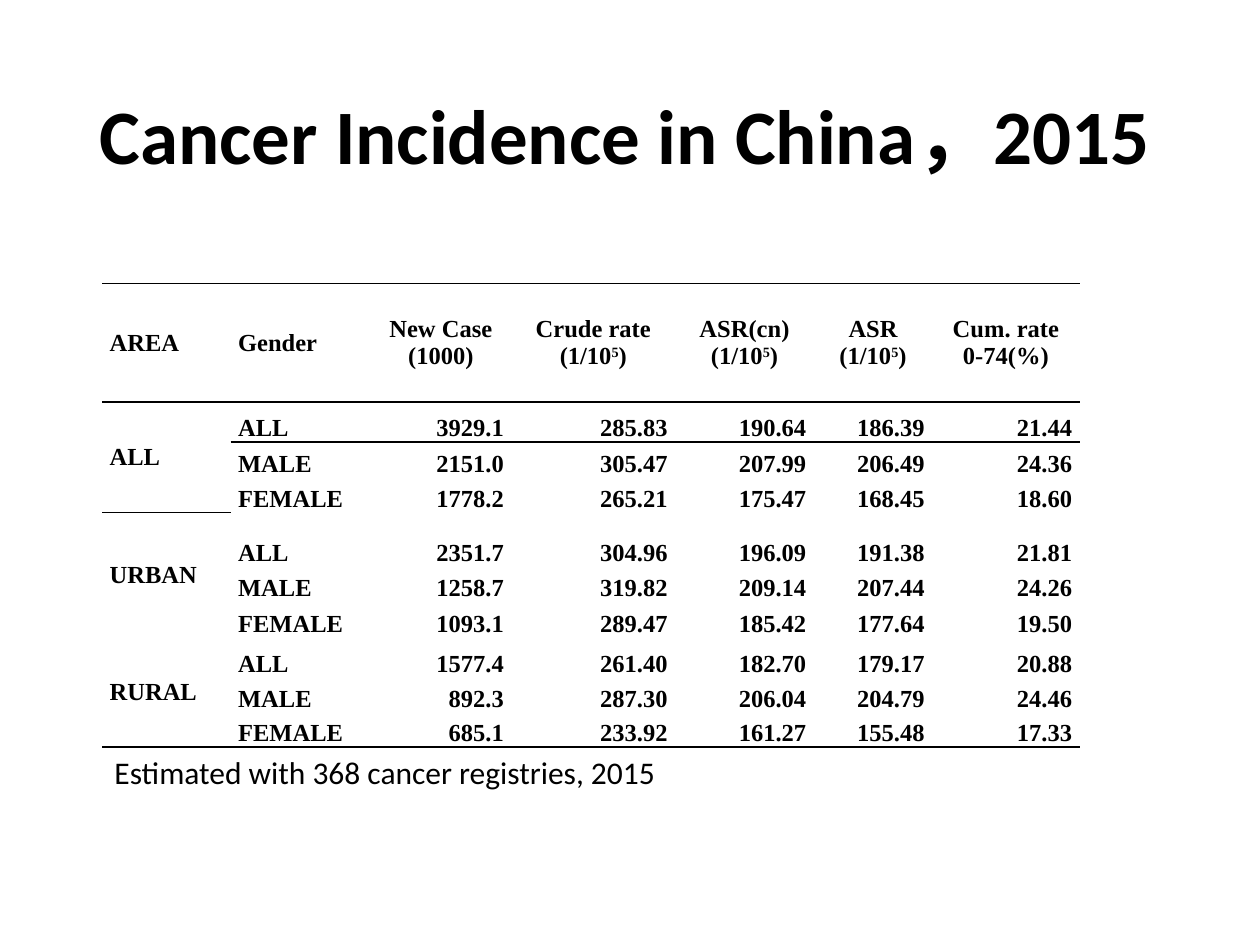
from lxml import etree
from pptx import Presentation
from pptx.dml.color import RGBColor
from pptx.enum import text
from pptx.oxml import ns
from pptx.util import Inches, Pt

BLACK = "000000"
NO_STYLE = "{2D5ABB26-0587-4C30-8999-92F81FD0307C}"


def add_run(paragraph, words, size, font, bold=False):
    run = paragraph.add_run()
    run.text = words
    run.font.size = Pt(size)
    run.font.name = font
    run.font.bold = bold
    run.font.color.rgb = RGBColor.from_string(BLACK)
    return run


def add_rule(cell, side):
    """Draw a 1 pt line on the top ("T") or bottom ("B") edge of a cell."""
    line = etree.SubElement(cell._tc.get_or_add_tcPr(), ns.qn("a:ln" + side), w=str(Pt(1)))
    fill = etree.SubElement(line, ns.qn("a:solidFill"))
    etree.SubElement(fill, ns.qn("a:srgbClr"), val=BLACK)


prs = Presentation()
prs.slide_width, prs.slide_height = Inches(10), Inches(7.5)
slide = prs.slides.add_slide(prs.slide_layouts[5])

title = slide.shapes.title
title.left, title.top = Inches(0.69), Inches(0.33)
title.width, title.height = Inches(8.62), Inches(1.55)
title.text_frame.vertical_anchor = text.MSO_ANCHOR.MIDDLE
heading = title.text_frame.paragraphs[0]
heading.alignment = text.PP_ALIGN.LEFT
heading.line_spacing = 0.9
add_run(heading, "Cancer Incidence in China，2015", 44, "Calibri", True)

# Each header is a list of paragraphs; "^" encloses a superscript.
headers = [
    ["AREA"], ["Gender"], ["New Case", "(1000)"], ["Crude rate (1/10^5^)"],
    ["ASR(cn)", "(1/10^5^)"], ["ASR (1/10^5^)"], ["Cum. rate", "0-74(%)"],
]
incidence = {
    "ALL": [
        ("ALL", "3929.1", "285.83", "190.64", "186.39", "21.44"),
        ("MALE", "2151.0", "305.47", "207.99", "206.49", "24.36"),
        ("FEMALE", "1778.2", "265.21", "175.47", "168.45", "18.60"),
    ],
    "URBAN": [
        ("ALL", "2351.7", "304.96", "196.09", "191.38", "21.81"),
        ("MALE", "1258.7", "319.82", "209.14", "207.44", "24.26"),
        ("FEMALE", "1093.1", "289.47", "185.42", "177.64", "19.50"),
    ],
    "RURAL": [
        ("ALL", "1577.4", "261.40", "182.70", "179.17", "20.88"),
        ("MALE", "892.3", "287.30", "206.04", "204.79", "24.46"),
        ("FEMALE", "685.1", "233.92", "161.27", "155.48", "17.33"),
    ],
}
rows = [headers]
for area, genders in incidence.items():
    for index, values in enumerate(genders):
        rows.append([[area] if index == 0 else []] + [[value] for value in values])

column_widths = [1.02, 1.11, 1.12, 1.3, 1.1, 0.94, 1.17]
row_heights = [0.94, 0.32, 0.28, 0.28, 0.43, 0.28, 0.28, 0.32, 0.28, 0.27]
frame = slide.shapes.add_table(
    len(rows), len(headers), Inches(0.81), Inches(2.25), Inches(7.75), Inches(3.68))
rates = frame.table
rates.first_row = rates.horz_banding = False
rates._tbl.tblPr.find(ns.qn("a:tableStyleId")).text = NO_STYLE
for column, width in zip(rates.columns, column_widths):
    column.width = Inches(width)
for row, height in zip(rates.rows, row_heights):
    row.height = Inches(height)
for first in (1, 4, 7):
    rates.cell(first, 0).merge(rates.cell(first + 2, 0))

for r, row in enumerate(rows):
    for c, lines in enumerate(row):
        cell = rates.cell(r, c)
        cell.margin_left = cell.margin_right = Inches(0.06)
        cell.margin_top = Inches(0.01 if r and c > 1 else 0)
        cell.margin_bottom = 0
        centred = r == 0 or c == 0
        cell.vertical_anchor = text.MSO_ANCHOR.MIDDLE if centred else text.MSO_ANCHOR.BOTTOM
        for n, line in enumerate(lines):
            body = cell.text_frame
            paragraph = body.add_paragraph() if n else body.paragraphs[0]
            if c > 1:
                paragraph.alignment = text.PP_ALIGN.RIGHT if r else text.PP_ALIGN.CENTER
            for part, words in enumerate(line.split("^")):
                run = add_run(paragraph, words, 14, "Times New Roman", True)
                if part % 2:
                    run.font._element.set("baseline", "30000")
        if r < 2:
            add_rule(cell, "T")
        if r == 0 or r == len(rows) - 1 or (c == 0 and r == 7):
            add_rule(cell, "B")

source = slide.shapes.add_textbox(Inches(0.81), Inches(5.93), Inches(4.66), Inches(0.4))
source.text_frame.word_wrap = False
source.text_frame.auto_size = text.MSO_AUTO_SIZE.SHAPE_TO_FIT_TEXT
add_run(source.text_frame.paragraphs[0],
        "Estimated with 368 cancer registries, 2015", 18, "Calibri")

prs.save("out.pptx")
